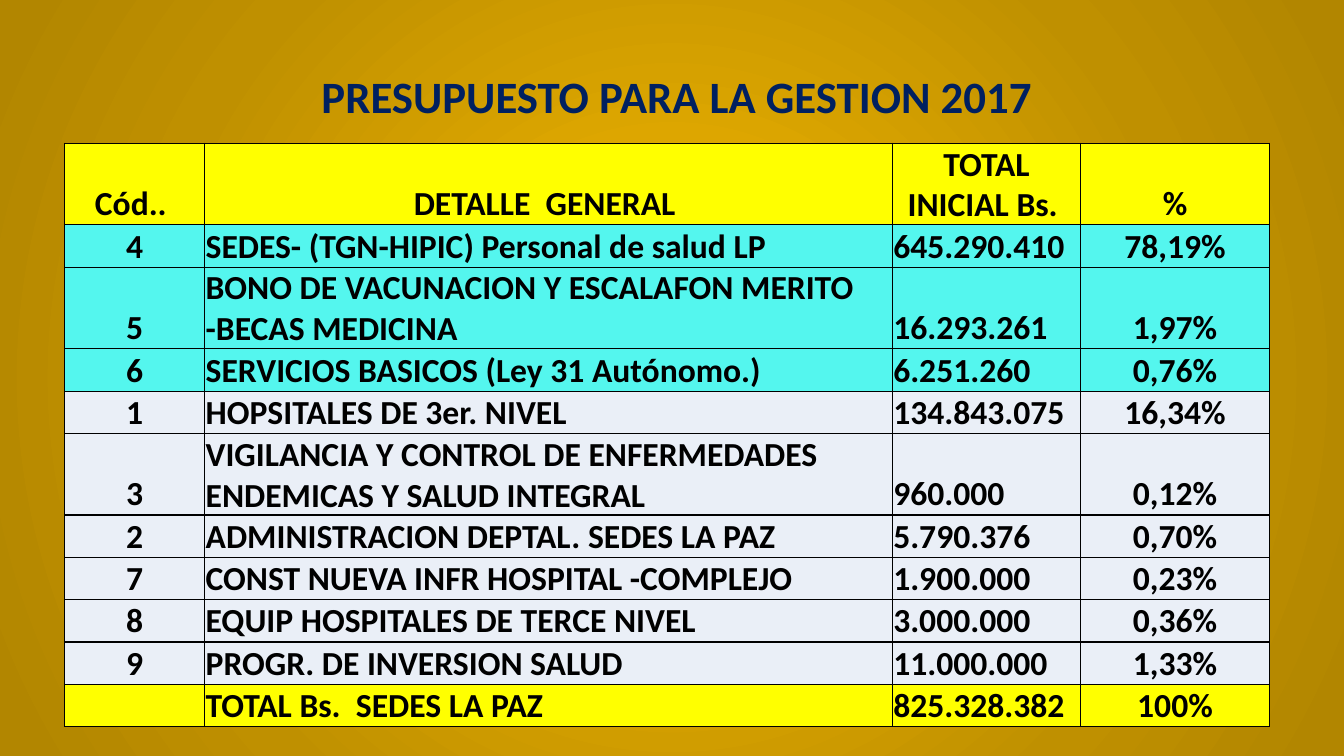
from lxml import etree
from pptx import Presentation
from pptx import util as u
from pptx.dml.color import RGBColor
from pptx.enum import text
from pptx.oxml import parse_xml
from pptx.oxml.ns import nsdecls, qn

YELLOW, CYAN, PALE = "FFFF00", "54F6EE", "EAEFF7"


def color(hex_code):
    return RGBColor.from_string(hex_code)


def style(paragraph, size, hex_code):
    paragraph.font.name = "Calibri"
    paragraph.font.size = u.Pt(size)
    paragraph.font.bold = True
    paragraph.font.color.rgb = color(hex_code)


presentation = Presentation()
presentation.slide_width = u.Inches(13.33)
presentation.slide_height = u.Inches(7.5)
slide = presentation.slides.add_slide(presentation.slide_layouts[6])

slide.background.fill.gradient()
background_stops = [(0, "E3AB00"), (23, "E3AB00"), (69, "BF9000"), (97, "B28600")]
stops_xml = "".join(
    f'<a:gs pos="{position * 1000}"><a:srgbClr val="{hex_code}"/></a:gs>'
    for position, hex_code in background_stops
)
radial_fill = parse_xml(
    f'<a:gradFill {nsdecls("a")} rotWithShape="1"><a:gsLst>{stops_xml}</a:gsLst>'
    '<a:path path="circle"><a:fillToRect l="50000" t="50000" r="50000" b="50000"/></a:path>'
    "</a:gradFill>"
)
linear_fill = next(slide.element.iter(qn("a:gradFill")))
linear_fill.getparent().replace(linear_fill, radial_fill)

title = slide.shapes.add_textbox(u.Inches(3.09), u.Inches(0.63), u.Inches(7.31), u.Inches(0.64))
title.text_frame.word_wrap = False
title.text_frame.auto_size = text.MSO_AUTO_SIZE.SHAPE_TO_FIT_TEXT
title_paragraph = title.text_frame.paragraphs[0]
title_paragraph.text = "PRESUPUESTO PARA LA GESTION 2017"
style(title_paragraph, 32, "002060")

budget = [
    (YELLOW, 0.72, "Cód.. ", "DETALLE  GENERAL ", "TOTAL INICIAL Bs. ", "%"),
    (CYAN, 0.42, "4", "SEDES- (TGN-HIPIC) Personal de salud LP", "645.290.410", "78,19%"),
    (CYAN, 0.72, "5", "BONO DE VACUNACION Y ESCALAFON MERITO -BECAS MEDICINA", "16.293.261", "1,97%"),
    (CYAN, 0.42, "6", "SERVICIOS BASICOS (Ley 31 Autónomo.)", "6.251.260", "0,76%"),
    (PALE, 0.42, "1", "HOPSITALES DE 3er. NIVEL", "134.843.075", "16,34%"),
    (PALE, 0.72, "3", "VIGILANCIA Y CONTROL DE ENFERMEDADES ENDEMICAS Y SALUD INTEGRAL", "960.000", "0,12%"),
    (PALE, 0.42, "2", "ADMINISTRACION DEPTAL. SEDES LA PAZ", "5.790.376", "0,70%"),
    (PALE, 0.42, "7", "CONST NUEVA INFR HOSPITAL -COMPLEJO", "1.900.000", "0,23%"),
    (PALE, 0.42, "8", "EQUIP HOSPITALES DE TERCE NIVEL", "3.000.000", "0,36%"),
    (PALE, 0.42, "9", "PROGR. DE INVERSION SALUD", "11.000.000", "1,33%"),
    (YELLOW, 0.42, "", "TOTAL Bs.  SEDES LA PAZ", "825.328.382", "100%"),
]
column_widths = [1.39, 6.82, 1.87, 1.87]

table = slide.shapes.add_table(
    len(budget), len(column_widths), u.Inches(0.64), u.Inches(1.42), u.Inches(11.95), u.Inches(5.78)
).table
for column, width in zip(table.columns, column_widths):
    column.width = u.Inches(width)

for row_index, (fill, height, *values) in enumerate(budget):
    table.rows[row_index].height = u.Inches(height)
    for column_index, value in enumerate(values):
        cell = table.cell(row_index, column_index)
        cell.margin_left = cell.margin_right = cell.margin_top = u.Inches(0.01)
        cell.margin_bottom = 0
        cell.vertical_anchor = text.MSO_ANCHOR.BOTTOM
        paragraph = cell.text_frame.paragraphs[0]
        paragraph.text = value
        centered = row_index == 0 or column_index in (0, 3)
        paragraph.alignment = text.PP_ALIGN.CENTER if centered else text.PP_ALIGN.LEFT
        style(paragraph, 24, "000000")
        properties = cell._tc.get_or_add_tcPr()
        for side in ("a:lnL", "a:lnR", "a:lnT", "a:lnB"):
            border = etree.SubElement(properties, qn(side), w=str(u.Pt(1)))
            line_fill = etree.SubElement(border, qn("a:solidFill"))
            etree.SubElement(line_fill, qn("a:srgbClr"), val="000000")
        cell.fill.solid()
        cell.fill.fore_color.rgb = color(fill)

presentation.save("out.pptx")
